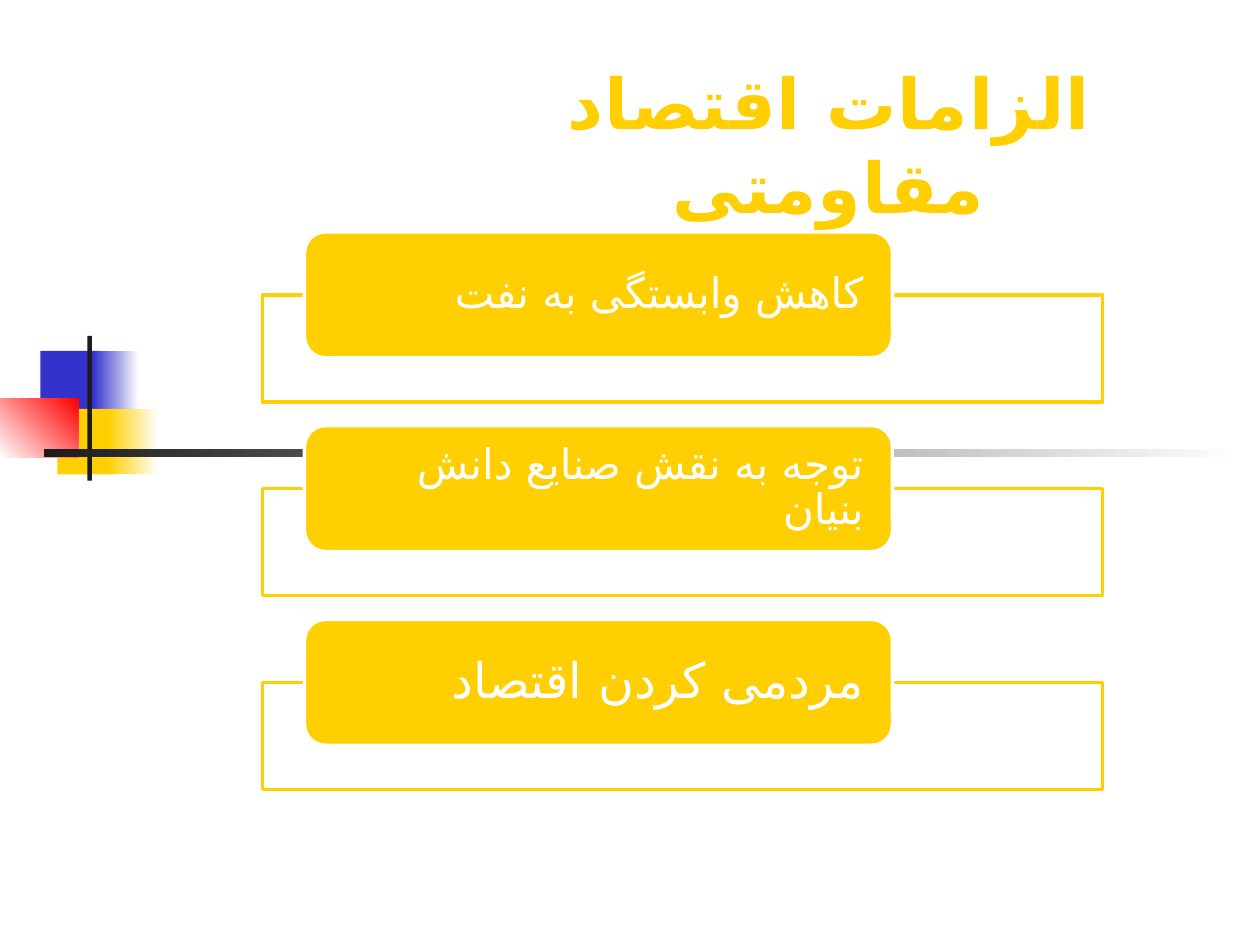
"""Builds a slide with three stacked requirement cards beside a cross ornament."""
from dataclasses import dataclass

from lxml import etree
from pptx import Presentation
from pptx import util as u
from pptx.dml.color import RGBColor
from pptx.enum import shapes, text
from pptx.oxml.ns import qn


@dataclass(frozen=True)
class Theme:
    gold: str = "FFCF01"
    white: str = "FFFFFF"
    blue: str = "3333CC"
    red: str = "FF0000"
    ink: str = "1C1C1C"
    title_font: str = "Vollkorn"
    card_font: str = "Calibri"
    arabic_font: str = "DejaVu Sans"
    title_size: int = 40
    card_size: int = 24
    large_size: int = 28
    line: int = 2


THEME = Theme()
COLUMNS, ROWS = 100, 75
TITLE = "الزامات اقتصاد مقاومتی"
TITLE_AREA = (39.2, 4.2, 53.3, 12.5)
CARDS = [
    ("کاهش وابستگی به نفت", THEME.card_size),
    ("توجه به نقش صنایع دانش بنیان", THEME.card_size),
    ("مردمی کردن اقتصاد", THEME.large_size),
]
CARD_TOP, CARD_PITCH = 18.4, 15.38
LABEL_LEFT, LABEL_WIDTH, LABEL_HEIGHT = 24.17, 46.67, 10
FRAME_LEFT, FRAME_WIDTH, FRAME_HEIGHT = 20.83, 66.67, 8.5
ORNAMENT = [
    ((3.2, 27.85, 4.8, 5.2), (THEME.blue,), 0),
    ((7.4, 27.85, 3.6, 5.2), (THEME.blue, THEME.white), 0),
    ((4.55, 32.45, 4.6, 5.2), (THEME.gold,), 0),
    ((8.6, 32.45, 4, 5.2), (THEME.gold, THEME.white), 0),
    ((0, 31.6, 6.2, 4.75), (THEME.white, THEME.red), 45),
    ((6.94, 26.65, 0.35, 11.5), (THEME.ink,), 0),
    ((3.5, 35.65, 95.1, 0.62), (THEME.ink, THEME.white), 0),
]

deck = Presentation()
deck.slide_width, deck.slide_height = u.Inches(10), u.Inches(7.5)
page = deck.slides.add_slide(deck.slide_layouts[6])


def place(area):
    """Turns grid columns and rows into slide lengths."""
    spans = (deck.slide_width / COLUMNS, deck.slide_height / ROWS) * 2
    return [round(cells * span) for cells, span in zip(area, spans)]


def add_block(kind, area, colors, angle=0, line=None):
    """Adds a shape with a solid or two-colour fill."""
    block = page.shapes.add_shape(kind, *place(area))
    block.shadow.inherit = False
    if len(colors) == 1:
        block.fill.solid()
        block.fill.fore_color.rgb = RGBColor.from_string(colors[0])
    else:
        block.fill.gradient()
        block.fill.gradient_angle = angle
        for stop, color in zip(block.fill.gradient_stops, colors):
            stop.color.rgb = RGBColor.from_string(color)
    if line:
        block.line.color.rgb = RGBColor.from_string(line)
        block.line.width = u.Pt(THEME.line)
    else:
        block.line.fill.background()
    return block


def write(box, words, font, size, color, align, insets, anchor):
    """Writes one right-to-left paragraph and returns it."""
    frame = box.text_frame
    frame.word_wrap = True
    frame.vertical_anchor = anchor
    frame.margin_left, frame.margin_top, frame.margin_right, frame.margin_bottom = map(u.Inches, insets)
    frame.text = words
    para = frame.paragraphs[0]
    para.alignment = align
    para._p.get_or_add_pPr().set("rtl", "1")
    span = para.runs[0]
    span.font.name, span.font.size = font, u.Pt(size)
    span.font.color.rgb = RGBColor.from_string(color)
    etree.SubElement(span.font._element, qn("a:cs"), typeface=THEME.arabic_font)
    return para


for area, colors, angle in ORNAMENT:
    add_block(shapes.MSO_SHAPE.RECTANGLE, area, colors, angle)

title = page.shapes.add_textbox(*place(TITLE_AREA))
heading = write(title, TITLE, THEME.title_font, THEME.title_size, THEME.gold,
                text.PP_ALIGN.CENTER, (0, 0.05, 0.02, 0.05), text.MSO_ANCHOR.TOP)
heading.runs[0].font.bold = True
heading.runs[0].font._element.set("spc", "50")

for row, (words, size) in enumerate(CARDS):
    top = CARD_TOP + row * CARD_PITCH
    panel = add_block(shapes.MSO_SHAPE.RECTANGLE,
                      (FRAME_LEFT, top + LABEL_HEIGHT / 2, FRAME_WIDTH, FRAME_HEIGHT),
                      (THEME.white,), line=THEME.gold)
    tint = panel.fill._xPr.find(qn("a:solidFill"))[0]
    etree.SubElement(tint, qn("a:alpha"), val="90000")
    label = add_block(shapes.MSO_SHAPE.ROUNDED_RECTANGLE,
                      (LABEL_LEFT, top, LABEL_WIDTH, LABEL_HEIGHT),
                      (THEME.gold,), line=THEME.white)
    para = write(label, words, THEME.card_font, size, THEME.white,
                 text.PP_ALIGN.RIGHT, (0.18, 0, 0.18, 0), text.MSO_ANCHOR.MIDDLE)
    para.line_spacing = 0.9

deck.save("out.pptx")
